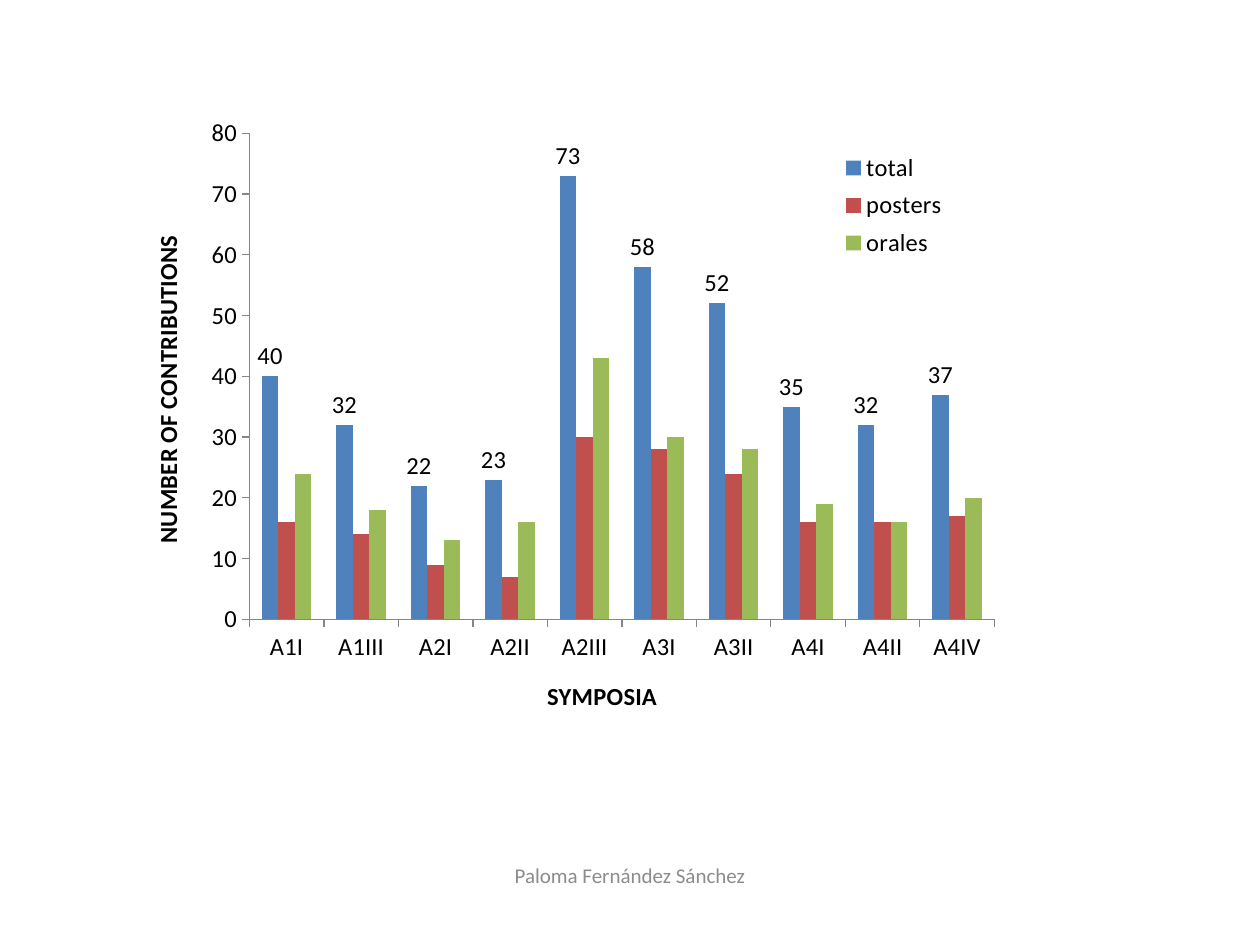
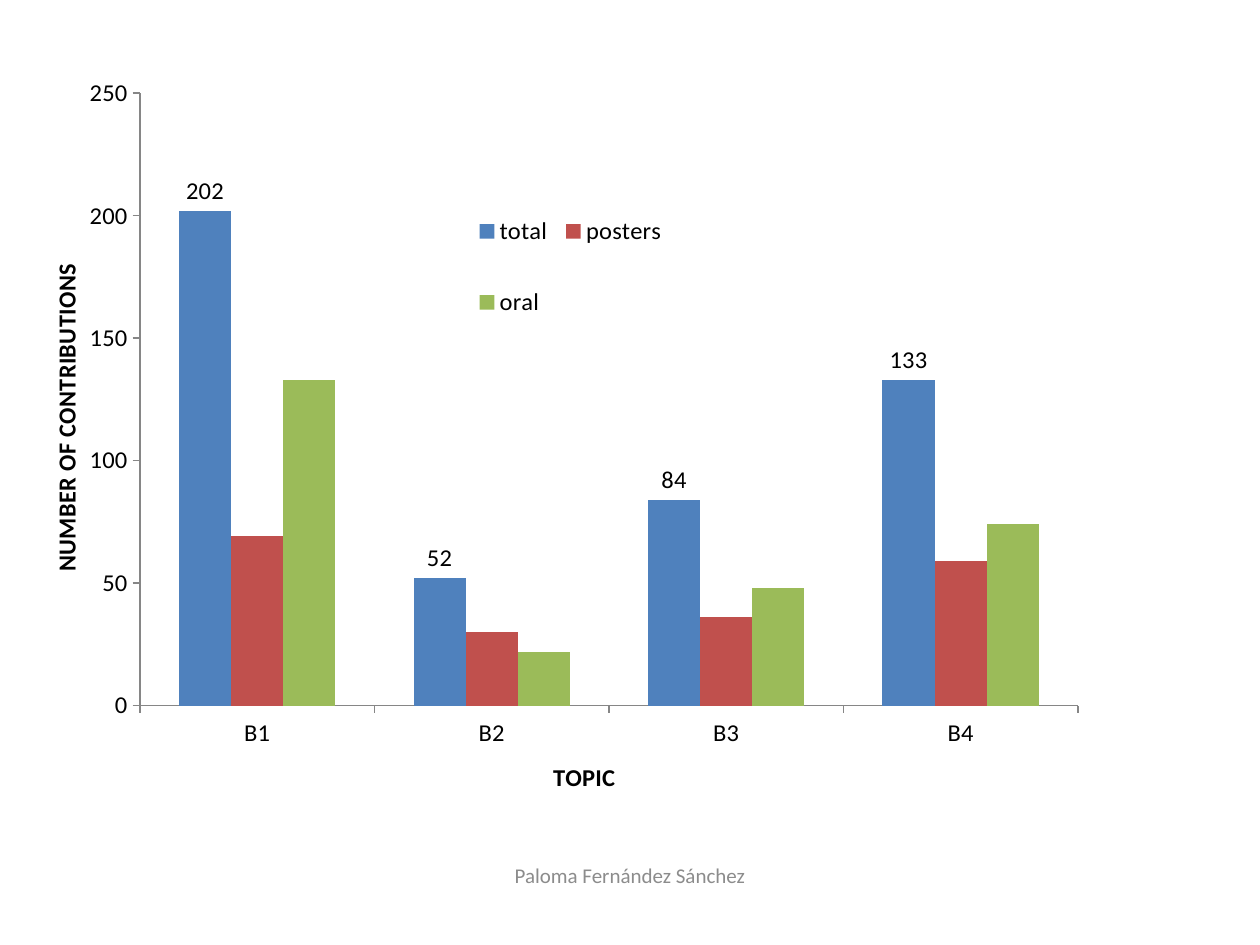
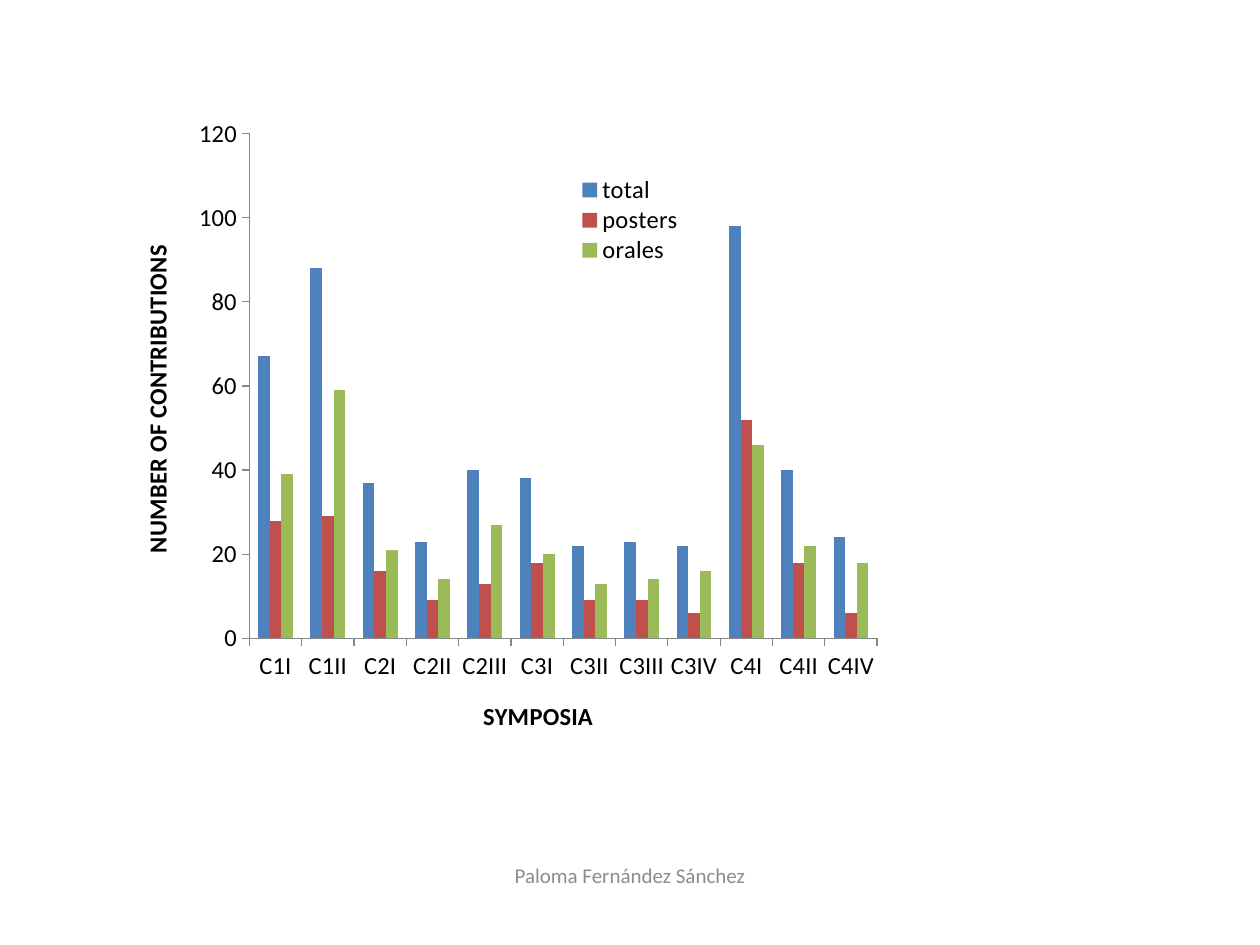
from lxml import etree
from pptx import Presentation
from pptx import util as u
from pptx.chart.data import CategoryChartData
from pptx.dml.color import RGBColor
from pptx.enum import chart as charts
from pptx.enum import text
from pptx.oxml.ns import qn

BLACK, GREY, AXIS_GREY = "000000", "8C8C8C", "868686"
SERIES_COLOURS = ("4F81BD", "C0504D", "9BBB59")
FONT = "Calibri"
LAYOUT_FIELDS = ("x", "y", "w", "h")


def colour(hex_string):
    return RGBColor.from_string(hex_string)


def place_in_chart(part, frame, box, index=1, inner=False):
    """Fix a chart part at box (slide points: left, top[, width, height])."""
    for old in part.findall(qn("c:layout")):
        part.remove(old)
    layout = etree.Element(qn("c:layout"))
    part.insert(index, layout)
    manual = etree.SubElement(layout, qn("c:manualLayout"))
    left, top, width, height = frame
    fractions = [(box[0] - left) / width, (box[1] - top) / height]
    if len(box) == 4:
        fractions += [box[2] / width, box[3] / height]
    settings = [("layoutTarget", "inner")] if inner else []
    settings += [("xMode", "edge"), ("yMode", "edge")]
    settings += [(name, f"{value:.4f}") for name, value in zip(LAYOUT_FIELDS, fractions)]
    for name, value in settings:
        etree.SubElement(manual, qn(f"c:{name}")).set("val", value)


class Deck:
    def __init__(self):
        self.presentation = Presentation()
        self.presentation.slide_width = u.Pt(720)
        self.presentation.slide_height = u.Pt(540)
        self.slide = None

    def add_slide(self):
        self.slide = self.presentation.slides.add_slide(self.presentation.slide_layouts[6])
        self.footer("Paloma Fernández Sánchez")

    def style_font(self, font, size, hex_string=BLACK, bold=False):
        font.name = FONT
        font.size = u.Pt(size)
        font.bold = bold
        font.color.rgb = colour(hex_string)

    def footer(self, words):
        box = self.slide.shapes.add_textbox(u.Pt(246), u.Pt(485.5), u.Pt(228), u.Pt(28.75))
        frame = box.text_frame
        frame.word_wrap = True
        frame.vertical_anchor = text.MSO_ANCHOR.MIDDLE
        paragraph = frame.paragraphs[0]
        paragraph.text = words
        paragraph.alignment = text.PP_ALIGN.CENTER
        self.style_font(paragraph.font, 12, GREY)

    def axis(self, axis, title):
        axis.has_major_gridlines = False
        axis.major_tick_mark = charts.XL_TICK_MARK.OUTSIDE
        axis.minor_tick_mark = charts.XL_TICK_MARK.NONE
        axis.format.line.color.rgb = colour(AXIS_GREY)
        self.style_font(axis.tick_labels.font, 14)
        paragraph = axis.axis_title.text_frame.paragraphs[0]
        paragraph.text = title
        self.style_font(paragraph.font, 14, bold=True)

    def column_chart(self, frame, plot_box, legend_box, category_title, category_title_at,
                     value_title_at, scale, categories, series, show_totals=True):
        data = CategoryChartData()
        data.categories = categories
        for name, values in series.items():
            data.add_series(name, values)
        chart = self.slide.shapes.add_chart(
            charts.XL_CHART_TYPE.COLUMN_CLUSTERED, *map(u.Pt, frame), data).chart
        chart.has_title = False
        self.style_font(chart.font, 10)

        plot = chart.plots[0]
        plot.gap_width = 150
        plot.overlap = 0
        plot.vary_by_categories = False
        for column, hex_string in zip(plot.series, SERIES_COLOURS):
            column.format.fill.solid()
            column.format.fill.fore_color.rgb = colour(hex_string)
        if show_totals:
            labels = plot.series[0].data_labels
            labels.show_value = True
            labels.position = charts.XL_LABEL_POSITION.OUTSIDE_END
            self.style_font(labels.font, 14)

        self.axis(chart.category_axis, category_title)
        self.axis(chart.value_axis, "NUMBER OF CONTRIBUTIONS")
        chart.value_axis.minimum_scale = 0
        chart.value_axis.maximum_scale, chart.value_axis.major_unit = scale

        chart.has_legend = True
        chart.legend.position = charts.XL_LEGEND_POSITION.RIGHT
        chart.legend.include_in_layout = False
        self.style_font(chart.legend.font, 14)

        def part(query):
            return chart.element.xpath(query)[0]

        place_in_chart(part(".//c:plotArea"), frame, plot_box, index=0, inner=True)
        place_in_chart(part(".//c:legend"), frame, legend_box)
        place_in_chart(part(".//c:catAx/c:title"), frame, category_title_at)
        place_in_chart(part(".//c:valAx/c:title"), frame, value_title_at)


def main():
    deck = Deck()

    deck.add_slide()
    deck.column_chart(
        frame=(70.5, 60.5, 578, 363), plot_box=(142.5, 76.2, 425.7, 277.8),
        legend_box=(478.8, 83.2, 64, 68.5), category_title="SYMPOSIA",
        category_title_at=(310, 385.5), value_title_at=(83.5, 132), scale=(80, 10),
        categories=["A1I", "A1III", "A2I", "A2II", "A2III", "A3I", "A3II", "A4I", "A4II", "A4IV"],
        series={"total": [40, 32, 22, 23, 73, 58, 52, 35, 32, 37],
                "posters": [16, 14, 9, 7, 30, 28, 24, 16, 16, 17],
                "orales": [24, 18, 13, 16, 43, 30, 28, 19, 16, 20]})

    deck.add_slide()
    deck.column_chart(
        frame=(25.2, 31.7, 635, 425.5), plot_box=(80, 53.5, 536, 354.5),
        legend_box=(268, 101, 116, 106), category_title="TOPIC",
        category_title_at=(313.5, 437), value_title_at=(25.5, 152), scale=(250, 50),
        categories=["B1", "B2", "B3", "B4"],
        series={"total": [202, 52, 84, 133],
                "posters": [69, 30, 36, 59],
                "oral": [133, 22, 48, 74]})

    deck.add_slide()
    deck.column_chart(
        frame=(65.5, 60.5, 516, 374.5), plot_box=(142.5, 76.3, 358.8, 288.5),
        legend_box=(329, 100, 62, 51.5), category_title="SYMPOSIA",
        category_title_at=(273.5, 397), value_title_at=(77.5, 137.5), scale=(120, 20),
        categories=["C1I", "C1II", "C2I", "C2II", "C2III", "C3I",
                    "C3II", "C3III", "C3IV", "C4I", "C4II", "C4IV"],
        series={"total": [67, 88, 37, 23, 40, 38, 22, 23, 22, 98, 40, 24],
                "posters": [28, 29, 16, 9, 13, 18, 9, 9, 6, 52, 18, 6],
                "orales": [39, 59, 21, 14, 27, 20, 13, 14, 16, 46, 22, 18]},
        show_totals=False)

    deck.presentation.save("out.pptx")


if __name__ == "__main__":
    main()
